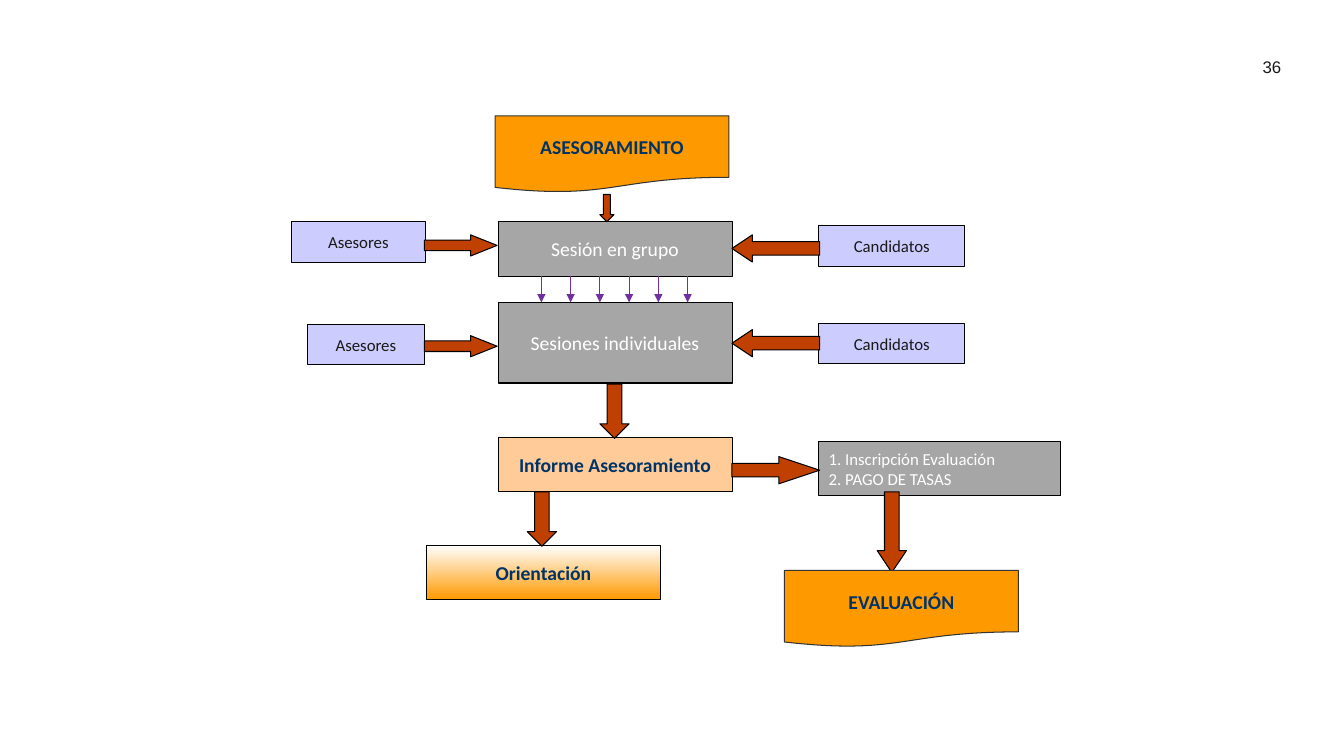
from dataclasses import dataclass

from lxml.etree import SubElement
from pptx import Presentation
from pptx.dml.color import RGBColor
from pptx.enum.shapes import MSO_CONNECTOR, MSO_SHAPE
from pptx.enum.text import MSO_ANCHOR, PP_ALIGN
from pptx.oxml.ns import qn
from pptx.util import Inches, Pt


@dataclass(frozen=True)
class Theme:
    ink: str = "1A1918"
    navy: str = "003366"
    white: str = "FFFFFF"
    black: str = "000000"
    charcoal: str = "333333"
    lilac: str = "CCCCFF"
    grey: str = "A6A6A6"
    peach: str = "FFCC99"
    orange: str = "FF9900"
    rust: str = "BF4000"
    violet: str = "7030A0"
    body: str = "Calibri"
    number: str = "Arial"
    small: int = 12
    large: int = 14
    line: float = 0.75


THEME = Theme()
PERSON = {"fill": THEME.lilac, "ink": THEME.ink, "size": THEME.small}
SESSION = {"fill": THEME.grey, "ink": THEME.white, "size": THEME.large}
STEPS = {**SESSION, "size": THEME.small, "align": PP_ALIGN.LEFT}
REPORT = {"fill": THEME.peach, "ink": THEME.navy, "size": THEME.large, "bold": True}
GUIDANCE = {**REPORT, "fill": (THEME.white, THEME.orange)}
STAGE = {**REPORT, "fill": THEME.orange, "line": THEME.charcoal,
         "kind": MSO_SHAPE.FLOWCHART_DOCUMENT}

BOXES = [
    ("Asesores", (2.89, 2.2, 1.33, 0.4), PERSON),
    ("Asesores", (3.05, 3.22, 1.16, 0.4), PERSON),
    ("Candidatos", (8.12, 2.24, 1.45, 0.4), PERSON),
    ("Candidatos", (8.12, 3.21, 1.45, 0.4), PERSON),
    ("Sesión en grupo", (4.94, 2.2, 2.32, 0.54), SESSION),
    ("Sesiones individuales", (4.94, 3, 2.32, 0.8), SESSION),
    ("Informe Asesoramiento", (4.94, 4.34, 2.32, 0.54), REPORT),
    ("Orientación", (4.23, 5.41, 2.32, 0.54), GUIDANCE),
    ("1. Inscripción Evaluación\n2. PAGO DE TASAS", (8.12, 4.38, 2.4, 0.54), STEPS),
]
STAGES = [
    ("ASESORAMIENTO", (4.91, 1.15, 2.32, 0.76)),
    ("EVALUACIÓN", (7.78, 5.66, 2.32, 0.76)),
]
ARROWS = [
    (MSO_SHAPE.DOWN_ARROW, (5.95, 1.93, 0.14, 0.27), 0.5),
    (MSO_SHAPE.RIGHT_ARROW, (4.21, 2.33, 0.72, 0.21), 1.25),
    (MSO_SHAPE.RIGHT_ARROW, (4.21, 3.33, 0.72, 0.21), 1.25),
    (MSO_SHAPE.LEFT_ARROW, (7.26, 2.33, 0.87, 0.27), 0.75),
    (MSO_SHAPE.LEFT_ARROW, (7.26, 3.27, 0.87, 0.27), 0.75),
    (MSO_SHAPE.DOWN_ARROW, (5.95, 3.81, 0.29, 0.54), 0.5),
    (MSO_SHAPE.DOWN_ARROW, (5.23, 4.88, 0.29, 0.54), 0.5),
    (MSO_SHAPE.RIGHT_ARROW, (7.26, 4.53, 0.87, 0.27), 1.5),
    (MSO_SHAPE.DOWN_ARROW, (8.7, 4.88, 0.29, 0.8), 0.75),
]


def set_all(target, values):
    for name, value in values.items():
        setattr(target, name, value)


def paint(fill, colour):
    if isinstance(colour, tuple):
        fill.gradient()
        fill.gradient_angle = 270
        for stop, shade in zip(fill.gradient_stops, colour):
            stop.color.rgb = RGBColor.from_string(shade)
    else:
        fill.solid()
        fill.fore_color.rgb = RGBColor.from_string(colour)


def outline(line, colour):
    line.color.rgb = RGBColor.from_string(colour)
    line.width = Pt(THEME.line)


def write(frame, text, ink, size, face=THEME.body, bold=False, align=PP_ALIGN.CENTER):
    frame.vertical_anchor = MSO_ANCHOR.MIDDLE
    frame.text = text
    for para in frame.paragraphs:
        para.alignment = align
        set_all(para.font, {"name": face, "size": Pt(size), "bold": bold})
        para.font.color.rgb = RGBColor.from_string(ink)


def add_outlined(page, kind, place, fill, line=THEME.black):
    shape = page.shapes.add_shape(kind, *map(Inches, place))
    shape.shadow.inherit = False
    paint(shape.fill, fill)
    outline(shape.line, line)
    return shape


def add_box(page, text, place, fill, line=THEME.black,
            kind=MSO_SHAPE.FLOWCHART_PROCESS, **style):
    box = add_outlined(page, kind, place, fill, line)
    box.text_frame.word_wrap = True
    write(box.text_frame, text, **style)


def add_block_arrow(page, kind, place, head):
    arrow = add_outlined(page, kind, place, THEME.rust)
    arrow.adjustments[0] = 0.5
    arrow.adjustments[1] = head


def add_thin_arrow(page, x, top, bottom):
    ends = map(Inches, (x, top, x, bottom))
    arrow = page.shapes.add_connector(MSO_CONNECTOR.STRAIGHT, *ends)
    outline(arrow.line, THEME.violet)
    SubElement(arrow.line._get_or_add_ln(), qn("a:tailEnd"), type="triangle")
    SubElement(arrow._element.spPr, qn("a:effectLst"))


def add_page_number(page, text, place):
    box = page.shapes.add_textbox(*map(Inches, place))
    set_all(box.text_frame, {
        "word_wrap": False,
        "margin_left": 0,
        "margin_right": 0,
        "margin_top": 0,
        "margin_bottom": 0,
    })
    write(box.text_frame, text, THEME.ink, THEME.small, THEME.number)


def main():
    deck = Presentation()
    set_all(deck, {"slide_width": Inches(13.33), "slide_height": Inches(7.5)})
    page = deck.slides.add_slide(deck.slide_layouts[6])
    add_page_number(page, "36", (12.46, 0.55, 0.31, 0.22))
    for text, place, style in BOXES:
        add_box(page, text, place, **style)
    for index in range(6):
        add_thin_arrow(page, 5.37 + 0.29 * index, 2.74, 3)
    for kind, place, head in ARROWS:
        add_block_arrow(page, kind, place, head)
    for text, place in STAGES:
        add_box(page, text, place, **STAGE)
    deck.save("out.pptx")


if __name__ == "__main__":
    main()
